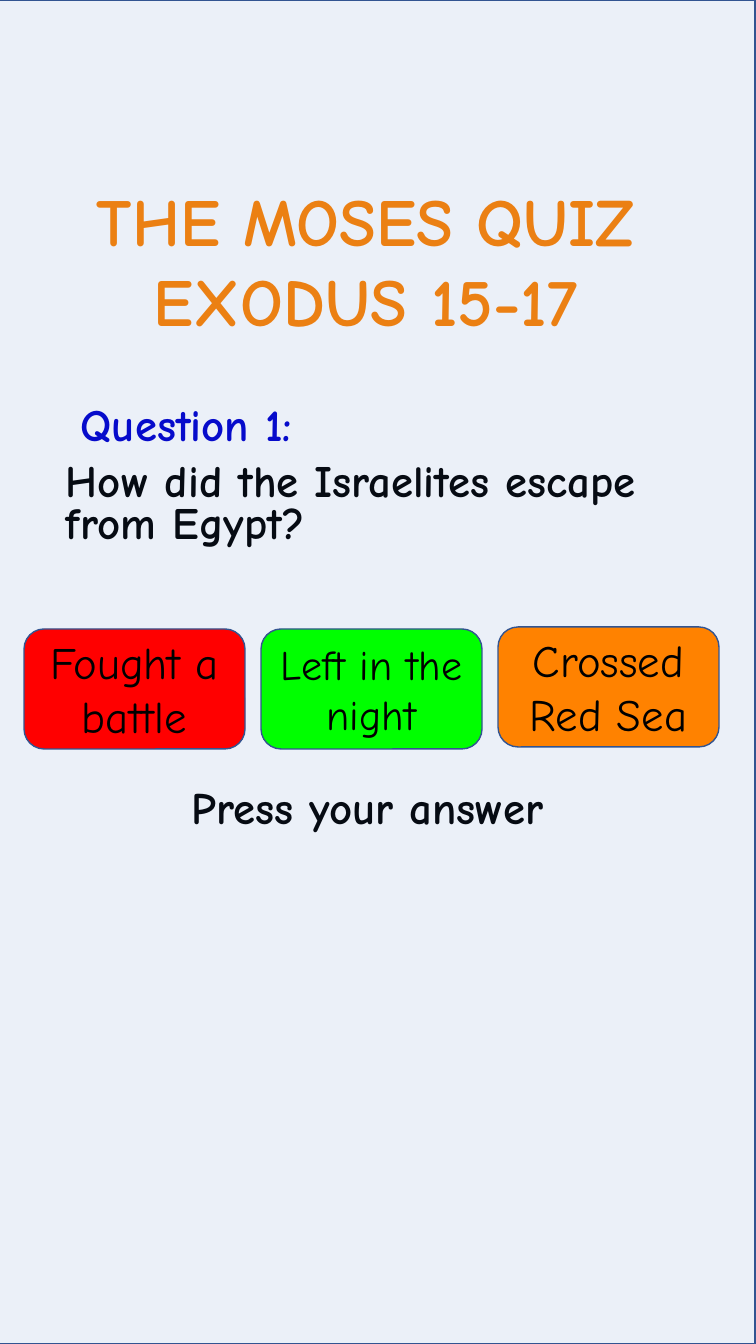
from lxml import etree
from pptx import Presentation
from pptx import util as u
from pptx.dml.color import RGBColor
from pptx.enum import shapes, text
from pptx.oxml import ns

EMU_PER_PX = 914400 / 100.8
WIDTH, HEIGHT = 756, 1344
FONT = "Comic Neue"

ORANGE = RGBColor(0xFF, 0x82, 0x00)
RED = RGBColor(0xFF, 0x00, 0x00)
GREEN = RGBColor(0x00, 0xFF, 0x00)
BLUE = RGBColor(0x00, 0x00, 0xCC)
BLACK = RGBColor(0x00, 0x00, 0x00)
TINT = RGBColor(0x44, 0x72, 0xC4)
OUTLINE = RGBColor(0x32, 0x54, 0x91)


def px(n):
    return u.Emu(round(n * EMU_PER_PX))


def write(sp, lines, size, color, bold=True, align=text.PP_ALIGN.CENTER,
          anchor=text.MSO_ANCHOR.TOP, wrap=True, spacing=None, before=0):
    tf = sp.text_frame
    tf.auto_size = text.MSO_AUTO_SIZE.NONE
    tf.word_wrap = wrap
    tf.vertical_anchor = anchor
    for i, line in enumerate(lines):
        p = tf.paragraphs[0] if i == 0 else tf.add_paragraph()
        p.alignment = align
        p.space_before = u.Pt(before)
        if spacing:
            p.line_spacing = spacing
        r = p.add_run()
        r.text = line
        r.font.name = FONT
        r.font.size = u.Pt(size)
        r.font.bold = bold
        r.font.color.rgb = color


def add_box(s, kind, x, y, w, h, fill):
    sp = s.shapes.add_shape(kind, px(x), px(y), px(w), px(h))
    sp.shadow.inherit = False
    sp.fill.solid()
    sp.fill.fore_color.rgb = fill
    sp.line.color.rgb = OUTLINE
    sp.line.width = u.Pt(1)
    return sp


def add_label(s, x, y, w, h, line, color=BLACK, **style):
    sp = s.shapes.add_textbox(px(x), px(y), px(w), px(h))
    write(sp, [line], 32, color, **style)


def add_title(s, x, y, w, h):
    sp = s.shapes.title
    sp.left, sp.top, sp.width, sp.height = px(x), px(y), px(w), px(h)
    # The closing space on each line is part of the centred text
    write(sp, ["THE MOSES QUIZ ", "EXODUS 15-17 "], 48, ORANGE, wrap=False)


def add_question(s, x, y, w, h):
    left = text.PP_ALIGN.LEFT
    add_label(s, x, y, 279, 65, "Question 1:", BLUE, wrap=False)
    add_label(s, x + 9, y + 68, w - 9, h - 68,
              "How did the Israelites escape from Egypt?",
              align=left, spacing=u.Pt(30), before=7.5)


def add_tint(s, x, y, w, h):
    sp = add_box(s, shapes.MSO_SHAPE.RECTANGLE, x, y, w, h, TINT)
    srgb = sp.fill._xPr.find(ns.qn("a:solidFill")).find(ns.qn("a:srgbClr"))
    etree.SubElement(srgb, ns.qn("a:alpha"), val="10000")


def add_answers(s, x, y, w, h):
    answers = [("Fought a battle", RED, 32, 0),
               ("Left in the night", GREEN, 30, 0),
               ("Crossed Red Sea", ORANGE, 32, -2)]
    button = 221
    pitch = (w - button) // (len(answers) - 1)
    for i, (answer, fill, size, dy) in enumerate(answers):
        sp = add_box(s, shapes.MSO_SHAPE.ROUNDED_RECTANGLE,
                     x + i * pitch, y + dy, button, h, fill)
        write(sp, [answer], size, BLACK, bold=False,
              anchor=text.MSO_ANCHOR.MIDDLE)


def main():
    prs = Presentation()
    prs.slide_width, prs.slide_height = px(WIDTH), px(HEIGHT)
    s = prs.slides.add_slide(prs.slide_layouts[5])

    # Heading, question and prompt
    add_title(s, 30, 174, 695, 173)
    add_question(s, 47, 392, 651, 188)
    add_label(s, 182, 781, 425, 73, "Press your answer",
              align=text.PP_ALIGN.LEFT, spacing=0.9, before=7.5)

    # Pale tint over the page, with the answer buttons on top
    add_tint(s, -1, 0, WIDTH, HEIGHT)
    add_answers(s, 24, 629, 695, 120)

    prs.save("out.pptx")


if __name__ == "__main__":
    main()
